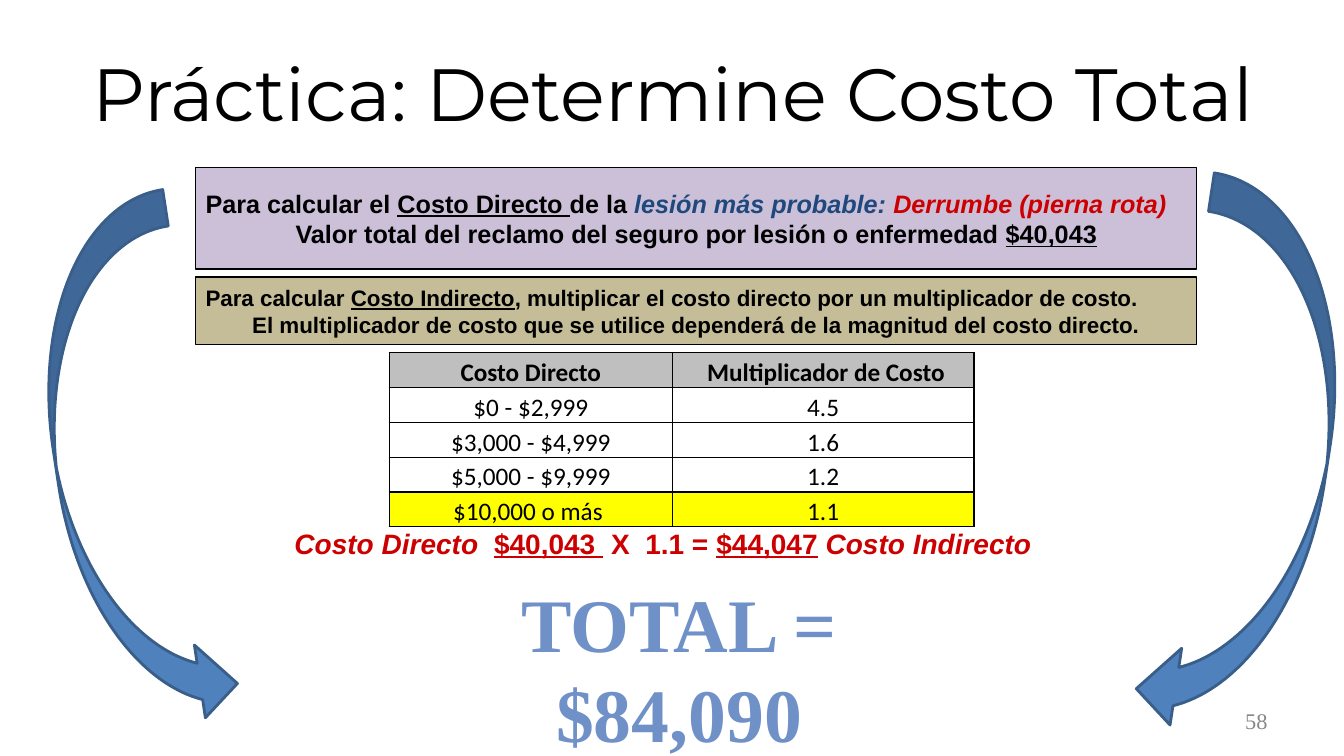
"""Build the slide that works out the total cost of an injury."""
from lxml.etree import SubElement
from pptx import Presentation
from pptx.dml.color import RGBColor
from pptx.enum.shapes import MSO_SHAPE
from pptx.enum.text import MSO_ANCHOR, MSO_AUTO_SIZE, PP_ALIGN
from pptx.oxml import parse_xml
from pptx.oxml.ns import nsdecls, qn
from pptx.util import Pt

SCALE = 9144
BLACK = RGBColor(0x00, 0x00, 0x00)
GRAY = RGBColor(0x88, 0x88, 0x88)
SILVER = RGBColor(0xBF, 0xBF, 0xBF)
YELLOW = RGBColor(0xFF, 0xFF, 0x00)
RED = RGBColor(0xCC, 0x00, 0x00)
NAVY = RGBColor(0x1F, 0x49, 0x7D)
BLUE = RGBColor(0x4F, 0x81, 0xBD)
EDGE = RGBColor(0x39, 0x5E, 0x89)
SKY = RGBColor(0x6F, 0x91, 0xC8)
TAN = RGBColor(0xC4, 0xBD, 0x97)
LILAC = RGBColor(0xCC, 0xC0, 0xD9)
LEFT, MID, RIGHT = PP_ALIGN.LEFT, PP_ALIGN.CENTER, PP_ALIGN.RIGHT


def emu(*sizes):
    return [size * SCALE for size in sizes]


class Deck:
    def __init__(self, wide, high):
        self.show = Presentation()
        self.show.slide_width, self.show.slide_height = emu(wide, high)
        self.slide = self.show.slides.add_slide(self.show.slide_layouts[5])
        self.shapes = self.slide.shapes

    def text(self, frame, font, size, *lines):
        frame.word_wrap = True
        for i, (align, *runs) in enumerate(lines):
            para = frame.add_paragraph() if i else frame.paragraphs[0]
            para.alignment = align
            for words, color, style in runs:
                run = para.add_run()
                run.text = words
                run.font.name = font
                run.font.size = Pt(size)
                run.font.color.rgb = color
                run.font.bold = "b" in style
                run.font.italic = "i" in style
                run.font.underline = "u" in style

    def title(self, box, font, size, words):
        head = self.shapes.title
        head.left, head.top, head.width, head.height = emu(*box)
        frame = head.text_frame
        frame.auto_size = MSO_AUTO_SIZE.NONE
        frame.vertical_anchor = MSO_ANCHOR.MIDDLE
        self.text(frame, font, size, (MID, (words, BLACK, "")))

    def label(self, box, font, size, line, anchor=MSO_ANCHOR.TOP):
        frame = self.shapes.add_textbox(*emu(*box)).text_frame
        frame.vertical_anchor = anchor
        self.text(frame, font, size, line)

    def shape(self, kind, box, fill, edge, width):
        item = self.shapes.add_shape(kind, *emu(*box))
        item.shadow.inherit = False
        item.fill.solid()
        item.fill.fore_color.rgb = fill
        item.line.color.rgb = edge
        item.line.width = Pt(width)
        return item

    def panel(self, box, fill, size, *lines):
        frame = self.shape(MSO_SHAPE.RECTANGLE, box, fill, BLACK, 1).text_frame
        frame.vertical_anchor = MSO_ANCHOR.MIDDLE
        self.text(frame, "Arial", size, *lines)

    def arrow(self, box, angle, flip=False):
        item = self.shape(MSO_SHAPE.CURVED_RIGHT_ARROW, box, BLUE, EDGE, 2)
        item.rotation = angle
        if flip:
            item._element.spPr.find(qn("a:xfrm")).set("flipH", "1")

    def border(self, cell):
        props = cell._tc.get_or_add_tcPr()
        for i, side in enumerate(("lnL", "lnR", "lnT", "lnB")):
            line = parse_xml(f'<a:{side} {nsdecls("a")} w="{Pt(1)}"/>')
            fill = SubElement(line, qn("a:solidFill"))
            SubElement(fill, qn("a:srgbClr"), val=str(BLACK))
            props.insert(i, line)

    def table(self, box, cols, rows, fills):
        grid = self.shapes.add_table(len(rows), len(cols), *emu(*box)).table
        for col, wide in zip(grid.columns, emu(*cols)):
            col.width = wide
        for r, row in enumerate(rows):
            for c, words in enumerate(row):
                cell = grid.cell(r, c)
                cell.margin_left, cell.margin_right = emu(7, 7)
                cell.margin_top = cell.margin_bottom = 0
                cell.vertical_anchor = MSO_ANCHOR.MIDDLE
                if r in fills:
                    cell.fill.solid()
                    cell.fill.fore_color.rgb = fills[r]
                else:
                    cell.fill.background()
                self.border(cell)
                style = "" if r else "b"
                self.text(cell.text_frame, "Calibri", 18,
                          (MID, (words, BLACK, style)))
                cell.text_frame.paragraphs[0].line_spacing = 1.15


def main():
    deck = Deck(1333, 750)
    deck.title((1, 10, 1333, 162), "Montserrat", 52.8,
               "Práctica: Determine Costo Total")
    deck.label((956, 695, 311, 40), "Times New Roman", 16,
               (RIGHT, ("58", GRAY, "")), MSO_ANCHOR.MIDDLE)
    deck.label((405, 567, 537, 101), "Times New Roman", 54,
               (MID, ("TOTAL = $84,090", SKY, "b")))
    deck.arrow((1162, 180, 154, 556), 8.6, flip=True)
    deck.arrow((56, 196, 146, 532), 351.4)
    deck.label((264, 517, 787, 44), "Arial", 20,
               (MID,
                ("Costo Directo  ", RED, "bi"),
                ("$40,043 ", RED, "bu"),
                (" X  1.1 = ", RED, "b"),
                ("$44,047", RED, "bu"),
                (" ", RED, "b"),
                ("Costo Indirecto", RED, "bi")))
    deck.table((386, 350, 580, 125), (281, 299), (
        ("Costo Directo", " Multiplicador de Costo"),
        ("$0 - $2,999", "4.5"),
        ("$3,000 - $4,999", "1.6"),
        ("$5,000 - $9,999", "1.2"),
        ("$10,000 o más ", "1.1"),
    ), {0: SILVER, 4: YELLOW})
    deck.panel((194, 275, 993, 67), TAN, 16,
               (LEFT,
                ("Para calcular ", BLACK, "b"),
                ("Costo Indirecto", BLACK, "bu"),
                (", multiplicar el costo directo por un multiplicador de costo.",
                 BLACK, "b")),
               (MID,
                ("El multiplicador de costo que se utilice dependerá de la "
                 "magnitud del costo directo.", BLACK, "b")))
    deck.panel((194, 166, 993, 101), LILAC, 18,
               (LEFT,
                ("Para calcular el ", BLACK, "b"),
                ("Costo Directo ", BLACK, "bu"),
                ("de la ", BLACK, "b"),
                ("lesión más probable: ", NAVY, "bi"),
                ("Derrumbe (pierna rota)", RED, "bi")),
               (MID,
                ("Valor total del reclamo del seguro por lesión o enfermedad ",
                 BLACK, "b"),
                ("$40,043", BLACK, "bu")))
    deck.show.save("out.pptx")


if __name__ == "__main__":
    main()
